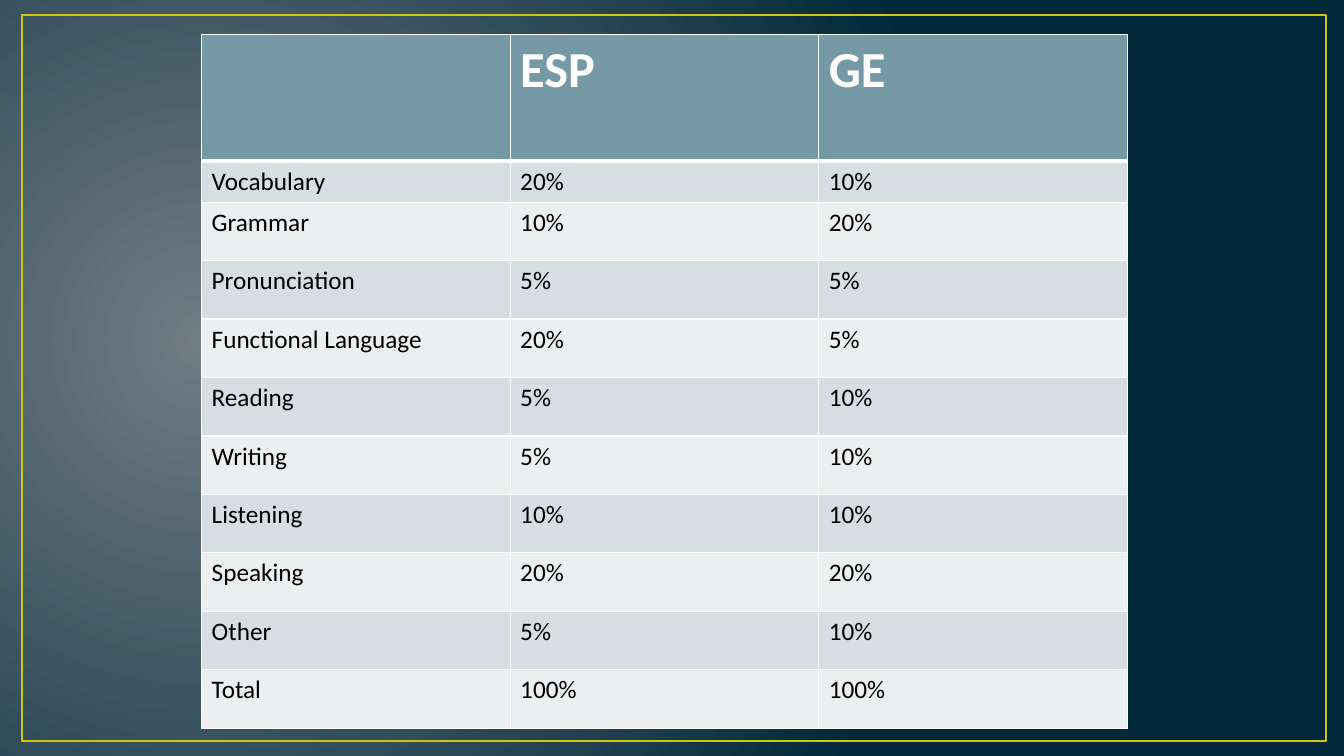
"""Build a slide that compares ESP and GE course content in a table."""
from lxml import etree
from pptx import Presentation
from pptx.dml.color import RGBColor
from pptx.enum.shapes import MSO_SHAPE
from pptx.oxml.ns import qn
from pptx.util import Inches, Pt

RECT = MSO_SHAPE.RECTANGLE
BANDS = ["ECEFF0", "D6DEE1"]
HEAD = {"size": Pt(36), "bold": True, "name": "Calibri"}
BODY = {"size": Pt(18), "bold": False, "name": "Calibri"}
ROWS = [
    ("", "ESP", "GE"),
    ("Vocabulary", "20%", "10%"),
    ("Grammar", "10%", "20%"),
    ("Pronunciation", "5%", "5%"),
    ("Functional Language", "20%", "5%"),
    ("Reading", "5%", "10%"),
    ("Writing", "5%", "10%"),
    ("Listening", "10%", "10%"),
    ("Speaking", "20%", "20%"),
    ("Other", "5%", "10%"),
    ("Total", "100%", "100%"),
]


def paint(color, code):
    color.rgb = RGBColor.from_string(code)


def edge(cell, side, width):
    line = etree.SubElement(cell._tc.get_or_add_tcPr(), qn(f"a:ln{side}"), w=str(Pt(width)))
    solid = etree.SubElement(line, qn("a:solidFill"))
    etree.SubElement(solid, qn("a:srgbClr"), val="FFFFFF")


deck = Presentation()
deck.slide_width = Inches(13.33)
deck.slide_height = Inches(7.5)
slide = deck.slides.add_slide(deck.slide_layouts[6])

back = slide.background.fill
back.gradient()
for stop, place, code in zip(back.gradient_stops, (0, 1), ("717C84", "01293A")):
    stop.position = place
    paint(stop.color, code)
glow = etree.Element(qn("a:path"), {"path": "circle"})
etree.SubElement(glow, qn("a:fillToRect"), l="15000", t="50000", r="85000", b="60000")
linear = next(slide.element.iter(qn("a:lin")))
linear.getparent().replace(linear, glow)

frame = slide.shapes.add_shape(RECT, Inches(0.22), Inches(0.15), Inches(12.93), Inches(7.2))
frame.shadow.inherit = False
frame.fill.background()
paint(frame.line.color, "CFC60D")
frame.line.width = Pt(1.5)

table = slide.shapes.add_table(
    len(ROWS), 3, Inches(2), Inches(0.34), Inches(9.18), Inches(6.88)).table
for col in table.columns:
    col.width = Inches(3.06)

for r, words in enumerate(ROWS):
    table.rows[r].height = Inches({0: 1.26, 1: 0.38}.get(r, 0.58))
    style, ink, shade = (BODY, "000000", BANDS[r % 2]) if r else (HEAD, "FFFFFF", "759AA5")
    sides = {"L": 1, "R": 1, "T": 3 if r == 1 else 1, "B": 1 if r else 3}
    for c, word in enumerate(words):
        cell = table.cell(r, c)
        for side, width in sides.items():
            edge(cell, side, width)
        cell.fill.solid()
        paint(cell.fill.fore_color, shade)
        cell.text = word
        for run in cell.text_frame.paragraphs[0].runs:
            for key, value in style.items():
                setattr(run.font, key, value)
            paint(run.font.color, ink)

deck.save("out.pptx")
